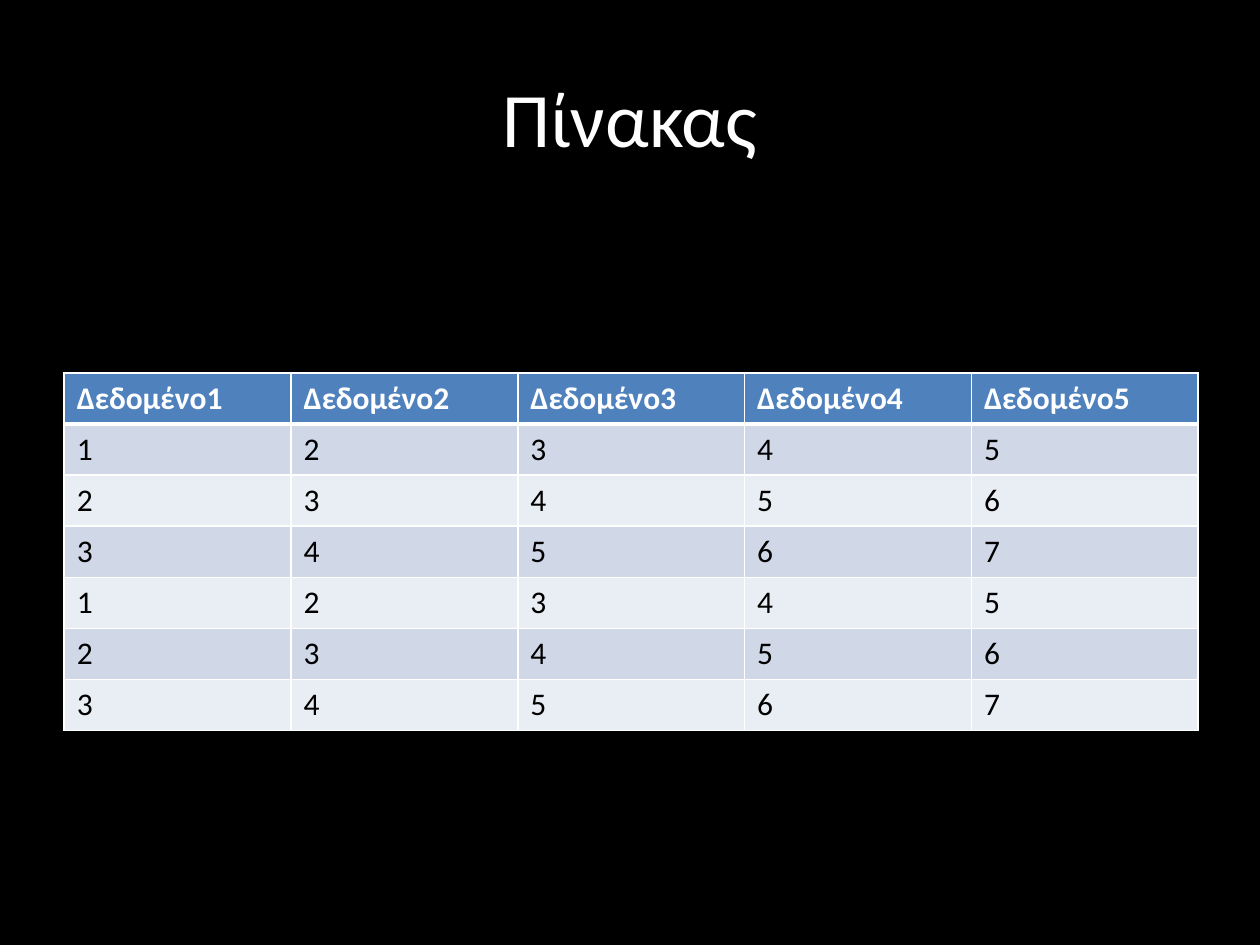
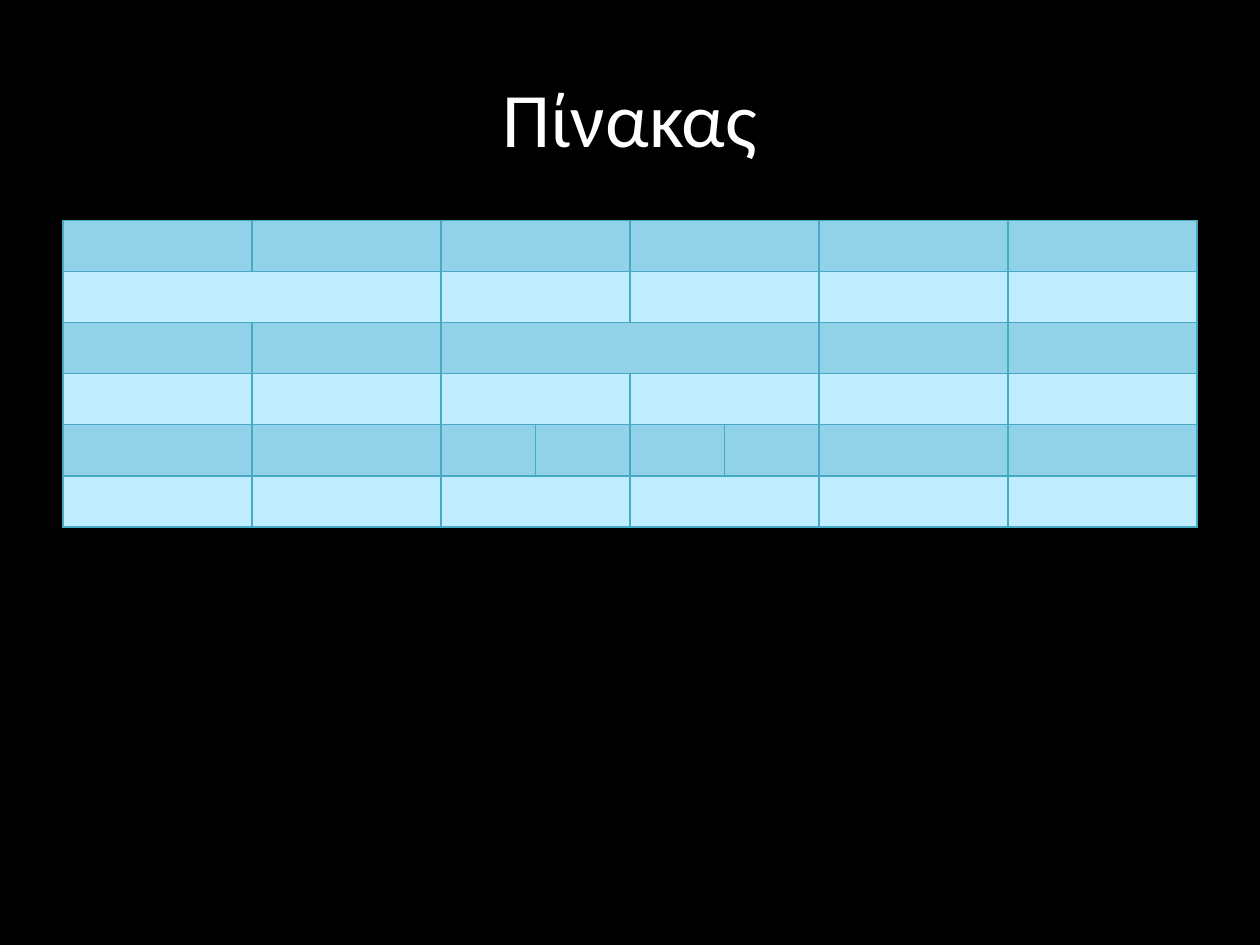
from lxml.etree import SubElement
from pptx import Presentation
from pptx.dml.color import RGBColor
from pptx.enum.text import MSO_ANCHOR, PP_ALIGN
from pptx.oxml.ns import qn
from pptx.util import Inches, Pt

# Shared look
FONT = "Calibri"
BLACK, WHITE = "000000", "FFFFFF"
HEADER_BLUE, BLUE_BANDS = "4F81BD", ("D0D8E8", "E9EDF4")
AQUA_LINE, AQUA_BANDS = "46AAC5", ("91D2E8", "BFECFF")
TITLE_BOX = (0.5, 0.3, 9, 1.25)
TITLE_ONLY = 5
NO_STYLE = "{2D5ABB26-0587-4C30-8999-92F81FD0307C}"


def color(hex_code):
    return RGBColor.from_string(hex_code)


def fill_solid(target, hex_code):
    target.fill.solid()
    target.fill.fore_color.rgb = color(hex_code)


def write(paragraph, text, size, hex_code, bold=False):
    run = paragraph.add_run()
    run.text = text
    run.font.name = FONT
    run.font.size = Pt(size)
    run.font.bold = bold
    run.font.color.rgb = color(hex_code)


def set_borders(cell, hex_code, **widths):
    """Draw the sides L, R, T and B of a cell, each with its width in points."""
    properties = cell._tc.get_or_add_tcPr()
    for side, width in widths.items():
        line = SubElement(properties, qn(f"a:ln{side}"), w=str(Pt(width)))
        solid = SubElement(line, qn("a:solidFill"))
        SubElement(solid, qn("a:srgbClr"), val=hex_code)


def add_titled_slide(prs, title_text):
    slide = prs.slides.add_slide(prs.slide_layouts[TITLE_ONLY])
    title = slide.shapes.title
    title.left, title.top, title.width, title.height = map(Inches, TITLE_BOX)
    title.text_frame.vertical_anchor = MSO_ANCHOR.MIDDLE
    paragraph = title.text_frame.paragraphs[0]
    paragraph.alignment = PP_ALIGN.CENTER
    write(paragraph, title_text, 44, WHITE)
    return slide


def add_plain_table(slide, box, row_count, column_shares):
    """Add an unstyled table with equal rows and columns sized by share."""
    left, top, width, height = box
    table = slide.shapes.add_table(
        row_count, len(column_shares), *map(Inches, box)).table
    table._tbl.tblPr.find(qn("a:tableStyleId")).text = NO_STYLE
    for column, share in zip(table.columns, column_shares):
        column.width = Inches(width * share / sum(column_shares))
    for row in table.rows:
        row.height = Inches(height / row_count)
    return table


def add_data_table(slide, box, headings, records):
    table = add_plain_table(slide, box, len(records) + 1, [1] * len(headings))
    for r, values in enumerate([headings, *records]):
        is_header = r == 0
        for c, value in enumerate(values):
            cell = table.cell(r, c)
            set_borders(cell, WHITE, L=1, R=1, T=3 if r == 1 else 1,
                        B=3 if is_header else 1)
            fill_solid(cell, HEADER_BLUE if is_header else BLUE_BANDS[(r - 1) % 2])
            write(cell.text_frame.paragraphs[0], str(value), 18,
                  WHITE if is_header else BLACK, is_header)


def add_merged_grid(slide, box, column_shares, row_spans):
    """row_spans lists, for each row, how many columns each cell covers."""
    table = add_plain_table(slide, box, len(row_spans), column_shares)
    for r, spans in enumerate(row_spans):
        c = 0
        for span in spans:
            cell = table.cell(r, c)
            if span > 1:
                cell.merge(table.cell(r, c + span - 1))
            set_borders(cell, AQUA_LINE, L=0.75, R=0.75, T=0.75, B=0.75)
            fill_solid(cell, AQUA_BANDS[r % 2])
            c += span


def main():
    prs = Presentation()
    prs.slide_width, prs.slide_height = Inches(10), Inches(7.5)
    fill_solid(prs.slide_master.background, BLACK)

    # Data table
    data_slide = add_titled_slide(prs, "Πίνακας")
    headings = [f"Δεδομένο{n}" for n in range(1, 6)]
    records = [range(first, first + 5) for first in (1, 2, 3) * 2]
    add_data_table(data_slide, (0.51, 2.96, 9, 2.84), headings, records)

    # Empty grid with merged and split cells
    grid_slide = add_titled_slide(prs, "Πίνακας")
    six_cells = [1, 1, 2, 2, 1, 1]
    row_spans = [six_cells, [2, 2, 2, 1, 1], [1, 1, 4, 1, 1],
                 six_cells, [1] * 8, six_cells]
    add_merged_grid(grid_slide, (0.5, 1.75, 9, 2.43),
                    [2, 2, 1, 1, 1, 1, 2, 2], row_spans)

    prs.save("out.pptx")


if __name__ == "__main__":
    main()
